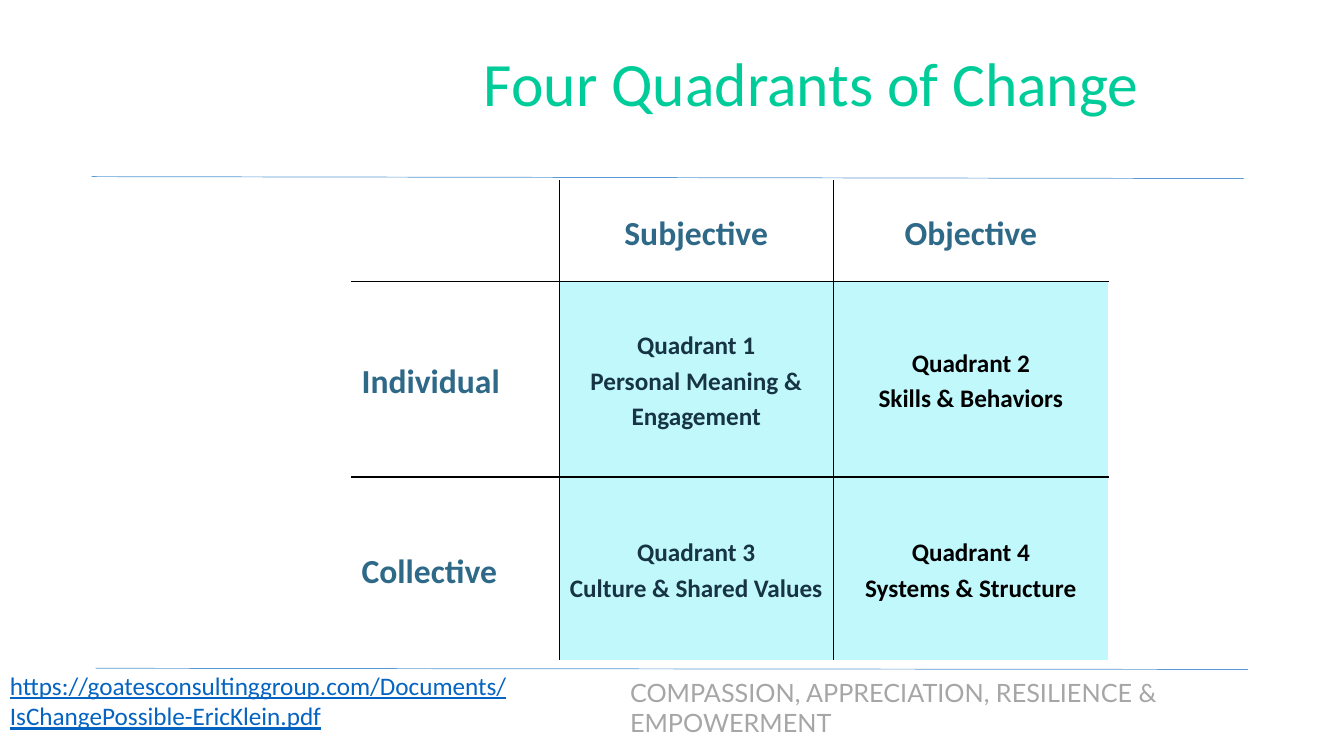
from lxml.etree import SubElement
from pptx import Presentation
from pptx.dml.color import RGBColor
from pptx.enum.shapes import MSO_CONNECTOR
from pptx.enum.text import MSO_ANCHOR, MSO_AUTO_SIZE, PP_ALIGN
from pptx.oxml.ns import qn
from pptx.util import Cm, Pt

COLORS = {
    "title": "00CC99",
    "rule": "5B9BD5",
    "footer": "A6A6A6",
    "link": "0563C1",
    "heading": "2E6988",
    "subjective": "163444",
    "black": "000000",
    "white": "FFFFFF",
    "quadrant": "C0F8FC",
}
COLUMN_WIDTHS = [5.23, 6.91, 6.93]
ROW_HEIGHTS = [2.54, 4.93, 4.62]
GRID = [
    ["", "Subjective", "Objective"],
    ["Individual", "Quadrant 1\nPersonal Meaning & Engagement", "Quadrant 2\nSkills & Behaviors"],
    ["Collective", "Quadrant 3\nCulture & Shared Values", "Quadrant 4\nSystems & Structure"],
]


def rgb(name):
    return RGBColor.from_string(COLORS[name])


def write_text(frame, text, *, size, color, font="Calibri", bold=False,
               underline=False, align=PP_ALIGN.LEFT, spacing=1.0):
    """Fill a text frame, one paragraph for each line of text."""
    frame.text = text
    for paragraph in frame.paragraphs:
        paragraph.alignment = align
        paragraph.line_spacing = spacing
        for run in paragraph.runs:
            run.font.name = font
            run.font.size = Pt(size)
            run.font.bold = bold
            run.font.underline = underline
            run.font.color.rgb = rgb(color)


def add_rule(slide, x1, y1, x2, y2):
    rule = slide.shapes.add_connector(
        MSO_CONNECTOR.STRAIGHT, Cm(x1), Cm(y1), Cm(x2), Cm(y2))
    rule.line.color.rgb = rgb("rule")
    rule.line.width = Pt(0.5)
    SubElement(rule._element.spPr, qn("a:effectLst"))


def add_text_box(slide, left, top, width, height, text, *, inset_left=0.25,
                 inset_top=0.13, **text_format):
    box = slide.shapes.add_textbox(Cm(left), Cm(top), Cm(width), Cm(height))
    frame = box.text_frame
    frame.word_wrap = True
    frame.margin_left = Cm(inset_left)
    frame.margin_top = Cm(inset_top)
    write_text(frame, text, **text_format)


def set_title(slide, text):
    title = slide.shapes.title
    title.left, title.top = Cm(11.13), Cm(0.58)
    title.width, title.height = Cm(19), Cm(3.18)
    frame = title.text_frame
    frame.auto_size = MSO_AUTO_SIZE.NONE
    frame.vertical_anchor = MSO_ANCHOR.MIDDLE
    write_text(frame, text, size=44, color="title", align=PP_ALIGN.CENTER, spacing=0.9)


def set_borders(cell, row, column):
    """Draw inner edges black and outer edges white."""
    last_row, last_column = len(ROW_HEIGHTS) - 1, len(COLUMN_WIDTHS) - 1
    is_outer = {"a:lnL": column == 0, "a:lnR": column == last_column,
                "a:lnT": row == 0, "a:lnB": row == last_row}
    properties = cell._tc.get_or_add_tcPr()
    for tag, outer in is_outer.items():
        width = Pt(0.75 if outer else 1)
        border = SubElement(properties, qn(tag), w=str(int(width)))
        fill = SubElement(border, qn("a:solidFill"))
        SubElement(fill, qn("a:srgbClr"), val=COLORS["white" if outer else "black"])


def format_cell(cell, row, column):
    is_quadrant = row > 0 and column > 0
    set_borders(cell, row, column)
    cell.fill.solid()
    cell.fill.fore_color.rgb = rgb("quadrant" if is_quadrant else "white")
    cell.vertical_anchor = MSO_ANCHOR.MIDDLE
    color = "heading"
    if is_quadrant:
        color = "subjective" if column == 1 else "black"
    write_text(cell.text_frame, GRID[row][column], size=18 if is_quadrant else 24,
               color=color, bold=True, spacing=1.15,
               align=PP_ALIGN.CENTER if column else PP_ALIGN.LEFT)


def add_quadrant_table(slide):
    frame = slide.shapes.add_table(
        len(ROW_HEIGHTS), len(COLUMN_WIDTHS), Cm(8.86), Cm(4.55),
        Cm(sum(COLUMN_WIDTHS)), Cm(sum(ROW_HEIGHTS)))
    table = frame.table
    table.first_row = table.horz_banding = False
    for column, width in zip(table.columns, COLUMN_WIDTHS):
        column.width = Cm(width)
    for row, height in zip(table.rows, ROW_HEIGHTS):
        row.height = Cm(height)
    for row in range(len(ROW_HEIGHTS)):
        for column in range(len(COLUMN_WIDTHS)):
            format_cell(table.cell(row, column), row, column)


def main():
    presentation = Presentation()
    presentation.slide_width, presentation.slide_height = Cm(33.87), Cm(19.05)
    slide = presentation.slides.add_slide(presentation.slide_layouts[5])

    add_rule(slide, 2.31, 4.45, 31.34, 4.5)
    add_rule(slide, 2.41, 16.84, 31.45, 16.87)
    add_text_box(slide, 15.32, 16.94, 17.17, 1.8,
                 "COMPASSION, APPRECIATION, RESILIENCE & EMPOWERMENT",
                 inset_left=0.56, size=18, color="footer", font="Lato")
    set_title(slide, "Four Quadrants of Change ")
    add_quadrant_table(slide)
    add_text_box(slide, 0, 16.64, 13.64, 0.81,
                 "https://goatesconsultinggroup.com/Documents/IsChangePossible-EricKlein.pdf",
                 inset_top=0.25, size=18, color="link", underline=True)

    presentation.save("out.pptx")


if __name__ == "__main__":
    main()
